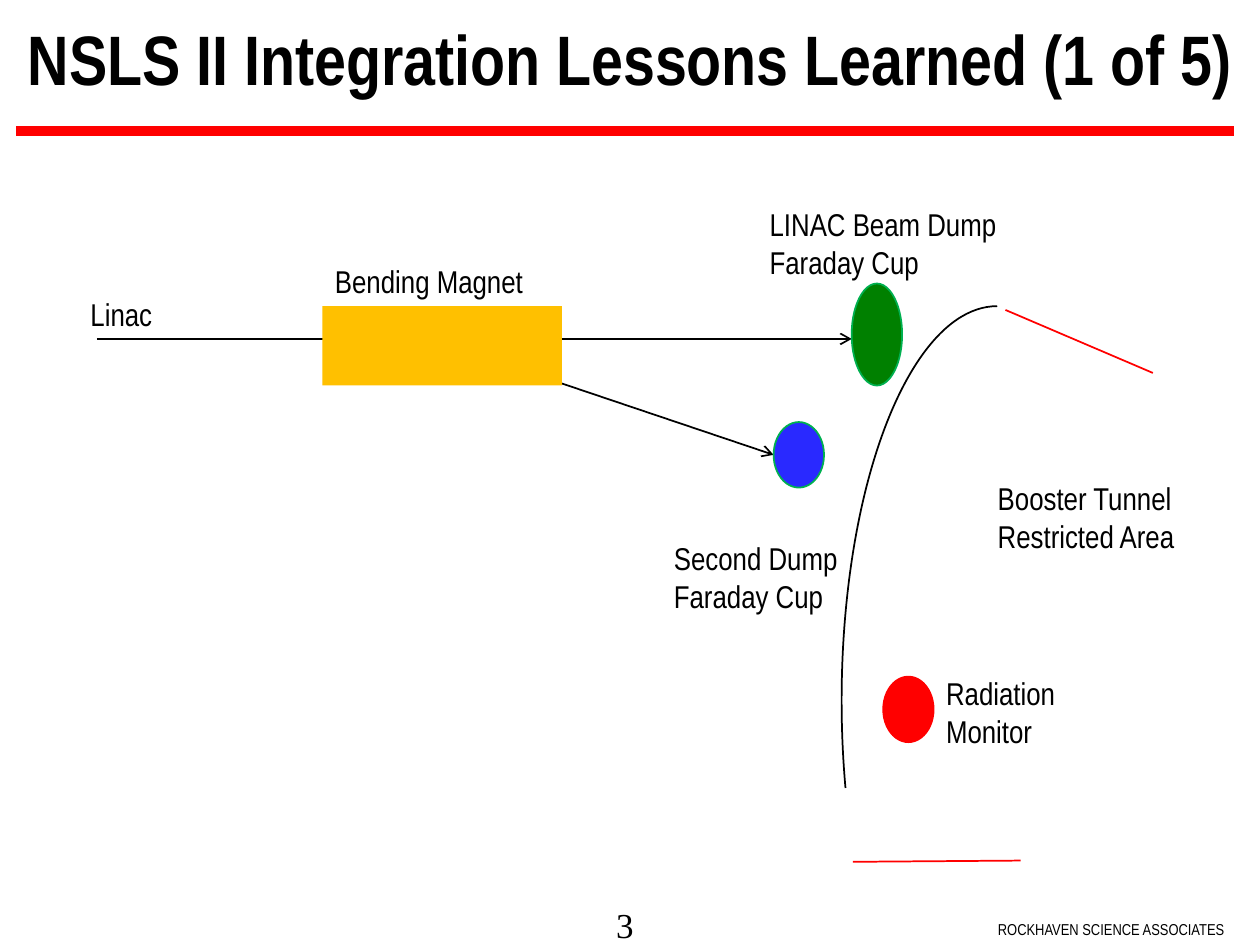
from pptx import Presentation
from pptx.dml.color import RGBColor
from pptx.enum.shapes import MSO_CONNECTOR as Connector, MSO_SHAPE as Shape
from pptx.enum.text import MSO_ANCHOR as Anchor, MSO_AUTO_SIZE as AutoSize, PP_ALIGN as Align
from pptx.oxml.ns import qn
from pptx.util import Inches, Pt
from lxml.etree import SubElement

BLACK = RGBColor(0x00, 0x00, 0x00)
RED = RGBColor(0xFF, 0x00, 0x00)
GREEN = RGBColor(0x00, 0x80, 0x00)
OUTLINE_GREEN = RGBColor(0x00, 0xB0, 0x50)
BLUE = RGBColor(0x29, 0x29, 0xFF)
GOLD = RGBColor(0xFF, 0xC0, 0x00)
SANS = "Arial Narrow"
SERIF = "Times New Roman"


def add_span(para, text, size, name=SANS, bold=False):
    """Add one formatted run to a paragraph."""
    span = para.add_run()
    span.text = text
    span.font.size = Pt(size)
    span.font.name = name
    span.font.bold = bold
    span.font.color.rgb = BLACK


def add_label(page, box, lines, size=18, name=SANS, insets=(0.1, 0.05)):
    """Add an unwrapped text box with one paragraph per line."""
    frame = page.shapes.add_textbox(*map(Inches, box)).text_frame
    frame.word_wrap = False
    frame.auto_size = AutoSize.SHAPE_TO_FIT_TEXT
    frame.margin_left = frame.margin_right = Inches(insets[0])
    frame.margin_top = frame.margin_bottom = Inches(insets[1])
    for index, line in enumerate(lines):
        para = frame.add_paragraph() if index else frame.paragraphs[0]
        add_span(para, line, size, name)


def add_line(page, start, end, color=BLACK, width=1, arrow=False):
    """Add a straight connector, with an arrowhead at its end if asked."""
    points = map(Inches, (*start, *end))
    line = page.shapes.add_connector(Connector.STRAIGHT, *points)
    line.line.color.rgb = color
    line.line.width = Pt(width)
    if arrow:
        SubElement(line.line._get_or_add_ln(), qn("a:tailEnd"), type="arrow")
    SubElement(line._element.spPr, qn("a:effectLst"))


def add_part(page, kind, box, fill=None, outline=None):
    """Add a flat preset shape with an optional fill and outline."""
    part = page.shapes.add_shape(kind, *map(Inches, box))
    part.shadow.inherit = False
    if fill is None:
        part.fill.background()
    else:
        part.fill.solid()
        part.fill.fore_color.rgb = fill
    if outline is None:
        part.line.fill.background()
    else:
        part.line.color.rgb = outline
        part.line.width = Pt(1)
    return part


def add_header(page, box):
    """Fill the title placeholder and draw the red rule below it."""
    title = page.shapes.title
    title.left, title.top, title.width, title.height = map(Inches, box)
    frame = title.text_frame
    frame.word_wrap = True
    frame.auto_size = AutoSize.NONE
    frame.vertical_anchor = Anchor.MIDDLE
    para = frame.paragraphs[0]
    para.alignment = Align.CENTER
    para.line_spacing = 0.9
    add_span(para, "NSLS II Integration Lessons Learned (1 of 5)", 40, bold=True)
    left, top, width, height = box
    rule = top + height + 0.05
    add_line(page, (left + width - 0.21, rule), (left + 0.13, rule), RED, 6)


def add_beamline(page, box):
    """Draw the beam paths, bending magnet and two Faraday cups."""
    left, top, width, height = box
    beam = top + 1.11
    cup = left + width - 0.4
    second_cup = cup - 0.62
    add_line(page, (left + 2.79, beam), (second_cup, top + 2.03), arrow=True)
    add_line(page, (left + 0.15, beam), (cup, beam), arrow=True)
    add_part(page, Shape.OVAL, (cup, top + 0.67, 0.4, 0.81), GREEN, OUTLINE_GREEN)
    add_part(page, Shape.RECTANGLE, (left + 1.94, top + 0.85, 1.9, 0.63), GOLD)
    add_part(page, Shape.OVAL, (second_cup, top + 1.77, 0.4, 0.52), BLUE, OUTLINE_GREEN)
    add_label(page, (left, top + 0.71, 0.7, 0.4), ["Linac"])
    add_label(page, (left + 1.94, top + 0.45, 1.71, 0.4), ["Bending Magnet"])
    add_label(page, (left + 5.39, top, 2.02, 0.71), ["LINAC Beam Dump", "Faraday Cup"])
    add_label(page, (left + 4.63, top + height - 0.71, 1.52, 0.71),
              ["Second Dump", "Faraday Cup"])


def add_booster_tunnel(page, box):
    """Draw the tunnel wall, its red gates and the radiation monitor."""
    left, top, width, height = box
    monitor = left + 0.33
    add_part(page, Shape.OVAL, (monitor, top + 2.94, 0.4, 0.52), RED, RED)
    add_label(page, (monitor + 0.4, top + 2.87, 1.08, 0.71), ["Radiation", "Monitor"])
    wall = add_part(page, Shape.ARC, (left, top, width, height), outline=BLACK)
    wall.adjustments[0] = 162
    wall.adjustments[1] = 17.98
    wall._element.spPr.find(qn("a:xfrm")).set("flipH", "1")
    add_line(page, (left + 0.09, top + 4.41), (left + 1.42, top + 4.4), RED)
    add_line(page, (left + 1.3, top + 0.03), (left + width, top + 0.53), RED)
    add_label(page, (left + 1.14, top + 1.32, 1.62, 0.71),
              ["Booster Tunnel", "Restricted Area"])


def add_footer(page, box):
    """Add the page number and the organisation line."""
    left, top, width, height = box
    add_label(page, (left + 4.89, top, 0.43, height), ["3"], 20, SERIF, (0, 0))
    add_label(page, (left + width - 1.92, top + 0.08, 1.92, 0.25),
              ["ROCKHAVEN SCIENCE ASSOCIATES"], 9, insets=(0, 0.05))


def main():
    """Build the deck and save it."""
    deck = Presentation()
    deck.slide_width = Inches(10)
    deck.slide_height = Inches(7.5)
    page = deck.slides.add_slide(deck.slide_layouts[5])
    add_header(page, (0, 0, 10, 0.99))
    add_beamline(page, (0.62, 1.58, 6.54, 3.36))
    add_booster_tunnel(page, (6.68, 2.43, 2.47, 6.26))
    add_footer(page, (0, 7.17, 9.84, 0.33))
    deck.save("out.pptx")


if __name__ == "__main__":
    main()
